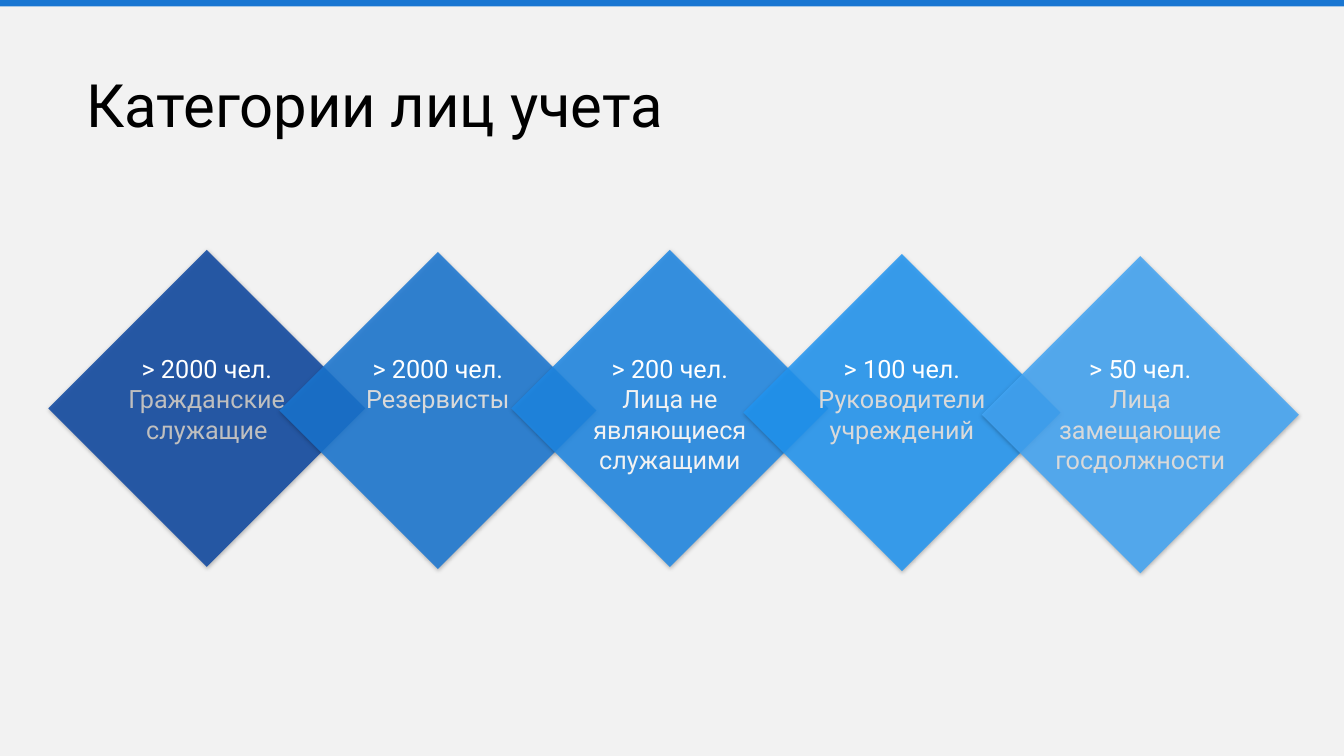
from lxml import etree
from pptx import Presentation
from pptx.dml.color import RGBColor
from pptx.enum.shapes import MSO_SHAPE
from pptx.enum.text import MSO_ANCHOR, PP_ALIGN
from pptx.oxml import parse_xml
from pptx.oxml.ns import nsdecls, qn
from pptx.util import Pt

RECT = MSO_SHAPE.RECTANGLE
DIAMOND = MSO_SHAPE.DIAMOND
CENTER = PP_ALIGN.CENTER
LEFT = PP_ALIGN.LEFT
TOP = MSO_ANCHOR.TOP
BOTTOM = MSO_ANCHOR.BOTTOM
PX = 9525
FONT = "Roboto"
SIDE = 302
LABEL_W, LABEL_TOP, LABEL_H = 182, 332, 126

CATEGORIES = [
    (46, 238, "0D47A1", "BFBFBF", ["> 2000 чел.", "Гражданские служащие"]),
    (266, 240, "1976D2", "D9D9D9", ["> 2000 чел.", "Резервисты"]),
    (487, 238, "1E88E5", "F2F2F2", ["> 200 чел.", "Лица не являющиеся", "служащими"]),
    (708, 242, "2196F3", "D9D9D9", ["> 100 чел.", "Руководители учреждений"]),
    (935, 244, "42A5F5", "D9D9D9", ["> 50 чел.", "Лица замещающие", "госдолжности"]),
]


def rgb(value):
    return RGBColor.from_string(value)


def px(*lengths):
    return [n * PX for n in lengths]


def add_filled(slide, kind, box, color):
    sp = slide.shapes.add_shape(kind, *px(*box))
    sp.shadow.inherit = False
    sp.fill.solid()
    sp.fill.fore_color.rgb = rgb(color)
    sp.line.fill.background()
    return sp


def add_text(slide, box, lines, size, colors, align, anchor):
    tf = slide.shapes.add_textbox(*px(*box)).text_frame
    tf.word_wrap = True
    tf.vertical_anchor = anchor
    tf.text = "\n".join(lines)
    for p, color in zip(tf.paragraphs, colors):
        p.alignment = align
        font = p.runs[0].font
        font.name = FONT
        font.size = Pt(size)
        font.color.rgb = rgb(color)


def add_diamond(slide, box, color):
    sp = add_filled(slide, DIAMOND, box, color)
    props = sp._element.spPr
    clr = props.find(qn("a:solidFill")).find(qn("a:srgbClr"))
    etree.SubElement(clr, qn("a:alpha")).set("val", "85000")
    props.find(qn("a:effectLst")).append(parse_xml(
        f'<a:outerShdw {nsdecls("a")} blurRad="{Pt(3)}" dist="{Pt(1)}" '
        'dir="5400000" algn="t" rotWithShape="0"><a:srgbClr val="000000">'
        '<a:alpha val="30000"/></a:srgbClr></a:outerShdw>'))


def add_header(slide, box):
    x, y, w, h = box
    add_filled(slide, RECT, (x, y, w, 6), "1976D2")
    add_text(slide, (x + 73, y + 37, 975, h - 37), ["Категории лиц учета"],
             42.7, ["000000"], LEFT, BOTTOM)


def add_categories(slide):
    for x, y, fill, _, _ in CATEGORIES:
        add_diamond(slide, (x, y, SIDE, SIDE), fill)
    for x, _, _, color, lines in CATEGORIES:
        box = (x + (SIDE - LABEL_W) // 2, LABEL_TOP, LABEL_W, LABEL_H)
        colors = ["FFFFFF"] + [color] * (len(lines) - 1)
        add_text(slide, box, lines, 18, colors, CENTER, TOP)


def main():
    prs = Presentation()
    prs.slide_width, prs.slide_height = px(1280, 720)
    slide = prs.slides.add_slide(prs.slide_layouts[6])
    slide.background.fill.solid()
    slide.background.fill.fore_color.rgb = rgb("F2F2F2")
    add_header(slide, (0, 0, 1280, 138))
    add_categories(slide)
    prs.save("out.pptx")


if __name__ == "__main__":
    main()
